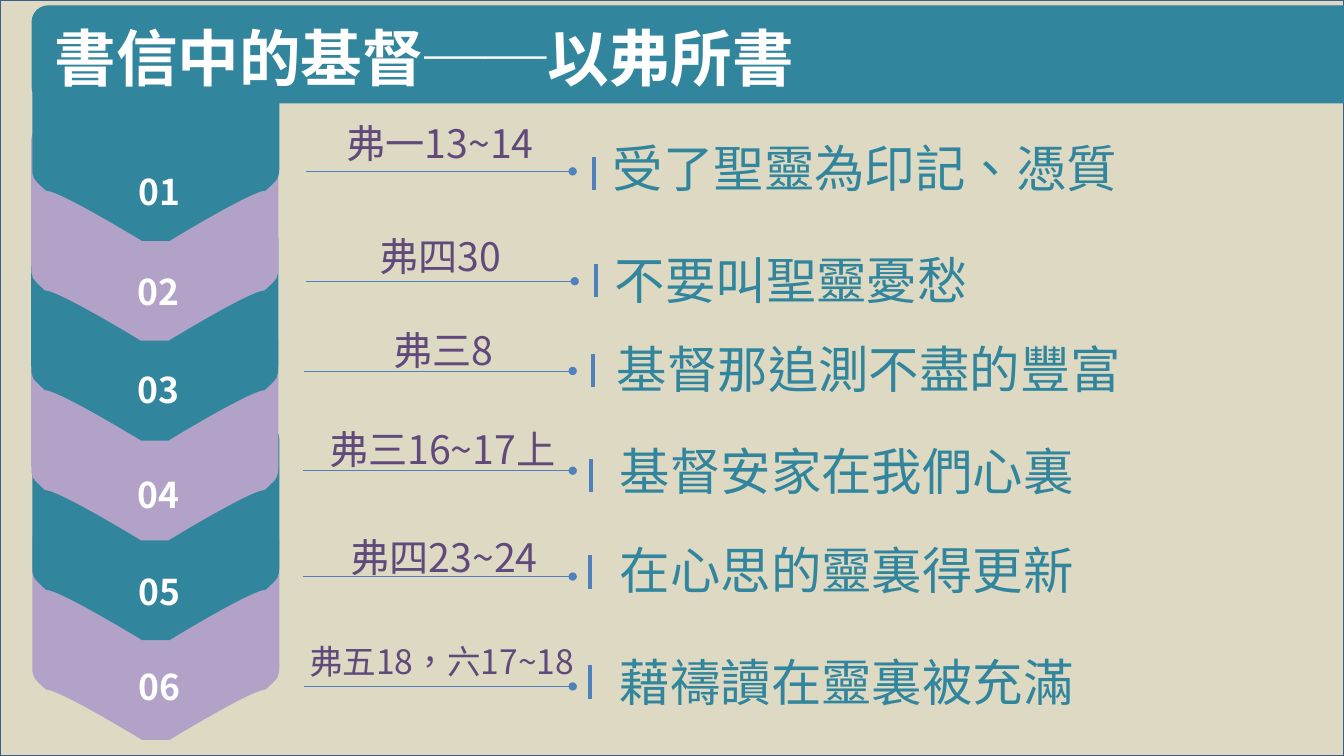
import pptx
import pptx.dml.color
import pptx.enum.shapes
import pptx.enum.text
import pptx.oxml.ns
import pptx.util
from lxml import etree
from pptx.util import Inches

RGBColor = pptx.dml.color.RGBColor
TEAL = RGBColor(0x31, 0x85, 0x9C)
LILAC = RGBColor(0xB3, 0xA2, 0xC7)
PURPLE = RGBColor(0x60, 0x4A, 0x7B)
BLUE = RGBColor(0x4F, 0x81, 0xBD)
NAVY = RGBColor(0x3A, 0x5F, 0x8C)
BEIGE = RGBColor(0xDD, 0xD9, 0xC3)
WHITE = RGBColor(0xFF, 0xFF, 0xFF)
FONT = "Noto Sans CJK SC"
CENTER = pptx.enum.text.PP_ALIGN.CENTER
LEFT = pptx.enum.text.PP_ALIGN.LEFT
SHAPE = pptx.enum.shapes.MSO_SHAPE
qn = pptx.oxml.ns.qn

presentation = pptx.Presentation()
presentation.slide_width = Inches(13.33)
presentation.slide_height = Inches(7.5)
slide = presentation.slides.add_slide(presentation.slide_layouts[5])


def write(shape, text, size, color, align=LEFT, bold=False, spacing=1.0):
    shape.text_frame.text = text
    shape.text_frame.word_wrap = True
    paragraph = shape.text_frame.paragraphs[0]
    paragraph.alignment = align
    paragraph.line_spacing = spacing
    font = paragraph.runs[0].font
    font.name, font.size, font.bold = FONT, pptx.util.Pt(size), bold
    font.color.rgb = color
    for properties in shape.element.iter(qn("a:rPr")):
        properties.set("lang", "zh-TW")
        etree.SubElement(properties, qn("a:ea"), typeface=FONT)


def draw_line(x1, y1, x2, y2, width):
    line = slide.shapes.add_connector(
        pptx.enum.shapes.MSO_CONNECTOR.STRAIGHT,
        Inches(x1), Inches(y1), Inches(x2), Inches(y2))
    line.line.color.rgb = BLUE
    line.line.width = pptx.util.Pt(width)
    etree.SubElement(line.element.spPr, qn("a:effectLst"))
    return line


background = slide.shapes.add_shape(
    SHAPE.RECTANGLE, 0, 0, Inches(13.33), Inches(7.5))
header = slide.shapes.add_shape(
    SHAPE.ROUNDED_RECTANGLE, Inches(0.32), Inches(0.06), Inches(13.33), Inches(0.96))
for shape, fill, outline in [(background, BEIGE, NAVY), (header, TEAL, TEAL)]:
    shape.shadow.inherit = False
    shape.fill.solid()
    shape.fill.fore_color.rgb = fill
    shape.line.color.rgb = outline
    shape.line.width = pptx.util.Pt(1)

BAND_CURVES = [
    [(17, 0), (18, 0), (18, 1)], [(18, 1), (18, 10), (18, 11)],
    [(18, 12), (18, 12), (17, 13)], [(16, 13), (10, 17), (10, 17)],
    [(9, 17), (9, 17), (8, 17)], [(8, 17), (2, 13), (1, 13)],
    [(0, 12), (0, 12), (0, 11)], [(0, 10), (0, 1), (0, 1)],
    [(0, 0), (1, 0), (1, 0)],
]
bands = [(0.32, 1.51), (0.31, 2.5), (0.31, 3.48), (0.31, 4.52), (0.32, 5.48), (0.32, 6.42)]
for index, (left, number_top) in reversed(list(enumerate(bands))):
    builder = slide.shapes.build_freeform(
        17, 0, scale=(Inches(2.45) / 18, Inches(2.12) / 17))
    builder.add_line_segments([curve[-1] for curve in BAND_CURVES], close=True)
    band = builder.convert_to_shape(Inches(left), Inches(0.27 + 0.99 * index))
    segments = list(band.element.iter(qn("a:lnTo")))
    for segment, curve in zip(segments, BAND_CURVES):
        bezier = etree.Element(qn("a:cubicBezTo"))
        for x, y in curve:
            etree.SubElement(bezier, qn("a:pt"), x=str(x), y=str(y))
        segment.getparent().replace(segment, bezier)
    band.shadow.inherit = False
    band.fill.solid()
    band.fill.fore_color.rgb = LILAC if index % 2 else TEAL
    band.line.fill.background()
    number = slide.shapes.add_textbox(
        Inches(left), Inches(number_top), Inches(2.45), Inches(0.65))
    write(number, f" {index + 1:02d}", 25.3, WHITE, CENTER, True, 1.3)

verses = [
    ("弗一13~14", 28, 3.04, 1.13, 2.65, 3.04, 5.68, 1.7, 5.89, 1.56, "受了聖靈為印記、憑質", 5.98, 1.31, 7),
    ("弗四30", 28, 3.04, 2.26, 2.65, 3.04, 5.7, 2.79, 5.91, 2.62, "不要叫聖靈憂愁", 6, 2.42, 6.66),
    ("弗三8", 28, 3.07, 3.19, 2.65, 3.02, 5.68, 3.68, 5.88, 3.51, "基督那追測不盡的豐富", 6.02, 3.3, 6.66),
    ("弗三16~17上", 28, 3.06, 4.17, 2.65, 3.01, 5.68, 4.67, 5.86, 4.55, "基督安家在我們心裏", 6.05, 4.32, 6.24),
    ("弗四23~24", 28, 3.08, 5.24, 2.65, 3.01, 5.68, 5.72, 5.85, 5.51, "在心思的靈裏得更新", 6.05, 5.3, 6.24),
    ("弗五18，六17~18", 24, 2.88, 6.31, 3, 3.02, 5.68, 6.81, 5.85, 6.6, "藉禱讀在靈裏被充滿", 6.05, 6.41, 6.66),
]
for (verse, size, verse_left, verse_top, verse_width, line_left, line_right, line_y,
     bar_x, bar_top, phrase, phrase_left, phrase_top, phrase_width) in verses:
    rule = draw_line(line_right, line_y, line_left, line_y, 0.5)
    etree.SubElement(rule.element.spPr.find(qn("a:ln")), qn("a:headEnd"), type="oval")
    draw_line(bar_x, bar_top, bar_x, bar_top + 0.33, 3)
    verse_box = slide.shapes.add_textbox(
        Inches(verse_left), Inches(verse_top), Inches(verse_width), Inches(size / 56 + 0.07))
    write(verse_box, verse, size, PURPLE, CENTER)
    phrase_box = slide.shapes.add_textbox(
        Inches(phrase_left), Inches(phrase_top), Inches(phrase_width), Inches(0.71))
    write(phrase_box, phrase, 36, TEAL)

title = slide.shapes.title
title.left, title.top, title.width, title.height = map(Inches, (0.44, 0.25, 12.18, 0.72))
write(title, "書信中的基督──以弗所書", 44, WHITE, LEFT, True, 0.9)
title.text_frame.vertical_anchor = pptx.enum.text.MSO_ANCHOR.MIDDLE
for shape in (header, title):
    slide.shapes.element.append(shape.element)

presentation.save("out.pptx")
